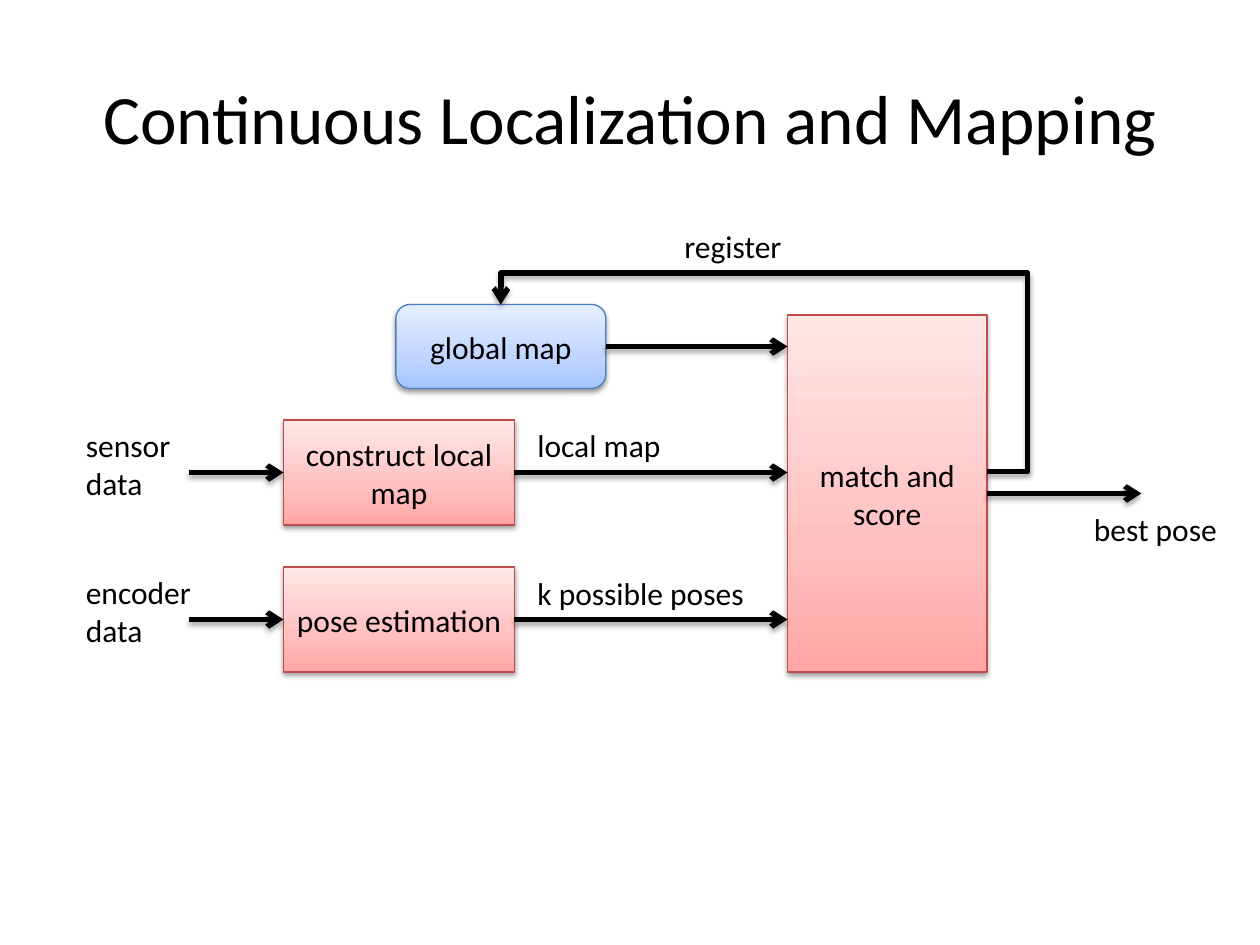
from lxml.etree import SubElement
from pptx import Presentation
from pptx.dml.color import RGBColor
from pptx.enum.shapes import MSO_CONNECTOR as Link, MSO_SHAPE as Shape
from pptx.enum.text import MSO_ANCHOR as Anchor, PP_ALIGN as Align
from pptx.oxml import parse_xml
from pptx.oxml.ns import nsdecls, qn
from pptx.util import Inches, Pt

# All positions are in grid cells of a twelfth of an inch.
COLUMNS, ROWS = 120, 90
CELL = Inches(10) / COLUMNS

FONT = "Calibri"
COLORS = {"ink": "000000", "red line": "BF4C48", "blue line": "4B7EBC"}
GRADIENTS = {
    "red": ((0, "FFA6A5"), (35, "FFC0BF"), (100, "FFE7E7")),
    "blue": ((0, "A4C4FF"), (35, "BFD4FF"), (100, "E6EEFF")),
}

TITLE = ("Continuous Localization and Mapping", 6, 3.6, 108, 15)
# text: shape, colour, left, top, width, height
BOXES = {
    "construct local map": (Shape.RECTANGLE, "red", 27, 40, 22, 10),
    "pose estimation": (Shape.RECTANGLE, "red", 27, 54, 22, 10),
    "match and score": (Shape.RECTANGLE, "red", 75, 30, 19, 34),
    "global map": (Shape.ROUNDED_RECTANGLE, "blue", 37.7, 29, 20, 8),
}
# text, left, top, width, height
LABELS = [
    ("sensor data", 7, 40, 11, 8.5),
    ("encoder data", 7, 54, 13, 8.5),
    ("local map", 50, 40, 16, 4.8),
    ("k possible poses", 50, 54.1, 23, 4.8),
    ("best pose", 103, 48, 16, 4.8),
    ("register", 64, 21, 16, 4.8),
]
INPUT_LEFT, OUTPUT_RIGHT = 18, 108.7
INPUTS = ["construct local map", "pose estimation"]
TO_MATCH = INPUTS + ["global map"]
LOOP_START, LOOP_RIGHT, LOOP_TOP = 44.9, 97.9, 26


def cells(*values):
    return [round(value * CELL) for value in values]


def add_shadow(properties, opacity, distance):
    properties.append(parse_xml(
        f'<a:effectLst {nsdecls("a")}><a:outerShdw blurRad="{Pt(3.1)}" '
        f'dist="{Pt(distance)}" dir="5400000" rotWithShape="0">'
        f'<a:srgbClr val="{COLORS["ink"]}"><a:alpha val="{opacity * 1000}"/>'
        '</a:srgbClr></a:outerShdw></a:effectLst>'))


def set_line(line, color, width):
    line.color.rgb = RGBColor.from_string(COLORS[color])
    line.width = Pt(width)


def write(shape, text, size=18, align=Align.LEFT, anchor=Anchor.TOP):
    frame = shape.text_frame
    for name, value in {"word_wrap": True, "vertical_anchor": anchor}.items():
        setattr(frame, name, value)
    para = frame.paragraphs[0]
    para.alignment = align
    span = para.add_run()
    span.text = text
    for name, value in {"name": FONT, "size": Pt(size)}.items():
        setattr(span.font, name, value)
    span.font.color.rgb = RGBColor.from_string(COLORS["ink"])


def add_box(page, text, kind, color, *place):
    box = page.shapes.add_shape(kind, *cells(*place))
    stops = "".join(
        f'<a:gs pos="{share * 1000}"><a:srgbClr val="{tone}"/></a:gs>'
        for share, tone in GRADIENTS[color])
    properties = box._element.spPr
    properties.append(parse_xml(
        f'<a:gradFill rotWithShape="1" {nsdecls("a")}><a:gsLst>{stops}</a:gsLst>'
        '<a:lin ang="16200000" scaled="0"/></a:gradFill>'))
    set_line(box.line, f"{color} line", 0.75)
    add_shadow(properties, 38, 1.6)
    write(box, text, align=Align.CENTER, anchor=Anchor.MIDDLE)
    return box


def add_arrow(page, start, end, kind=Link.STRAIGHT):
    arrow = page.shapes.add_connector(kind, *cells(*start, *end))
    set_line(arrow.line, "ink", 3)
    SubElement(arrow.line._get_or_add_ln(), qn("a:tailEnd"), type="arrow")
    add_shadow(arrow._element.spPr, 35, 1.8)
    return arrow


def add_loop(page, start, end):
    """Draw the feedback arrow: right, up, back left, then down."""
    loop = add_arrow(page, start, end, Link.ELBOW)
    properties = loop._element.spPr
    frame = properties.find(qn("a:xfrm"))
    for flip in ("flipH", "flipV"):
        frame.attrib.pop(flip, None)
    frame.set("rot", "10800000")
    geometry = properties.find(qn("a:prstGeom"))
    geometry.set("prst", "bentConnector4")
    bends = ((start[0] - LOOP_RIGHT) / (start[0] - end[0]),
             (start[1] - LOOP_TOP) / (start[1] - end[1]))
    for number, share in enumerate(bends, 1):
        SubElement(geometry.find(qn("a:avLst")), qn("a:gd"),
                   name=f"adj{number}", fmla=f"val {round(share * 100000)}")


def main():
    deck = Presentation()
    deck.slide_width, deck.slide_height = cells(COLUMNS, ROWS)
    page = deck.slides.add_slide(deck.slide_layouts[6])

    text, *place = TITLE
    write(page.shapes.add_textbox(*cells(*place)), text, 39.6,
          Align.CENTER, Anchor.MIDDLE)
    boxes = {text: add_box(page, text, *rest) for text, rest in BOXES.items()}

    match_left, match_top, match_width, match_height = BOXES["match and score"][2:]
    match_right = match_left + match_width
    for name in TO_MATCH:
        left, top, width, height = BOXES[name][2:]
        middle = top + height / 2
        arrow = add_arrow(page, (left + width, middle), (match_left, middle))
        arrow.begin_connect(boxes[name], 3)
        if name in INPUTS:
            arrow = add_arrow(page, (INPUT_LEFT, middle), (left, middle))
            arrow.end_connect(boxes[name], 1)

    middle = match_top + match_height / 2
    output = add_arrow(page, (match_right, middle), (OUTPUT_RIGHT, middle))
    output.begin_connect(boxes["match and score"], 3)
    left, top, width, _ = BOXES["global map"][2:]
    add_loop(page, (match_right, LOOP_START), (left + width / 2, top))

    for text, *place in LABELS:
        write(page.shapes.add_textbox(*cells(*place)), text)
    deck.save("out.pptx")


if __name__ == "__main__":
    main()
